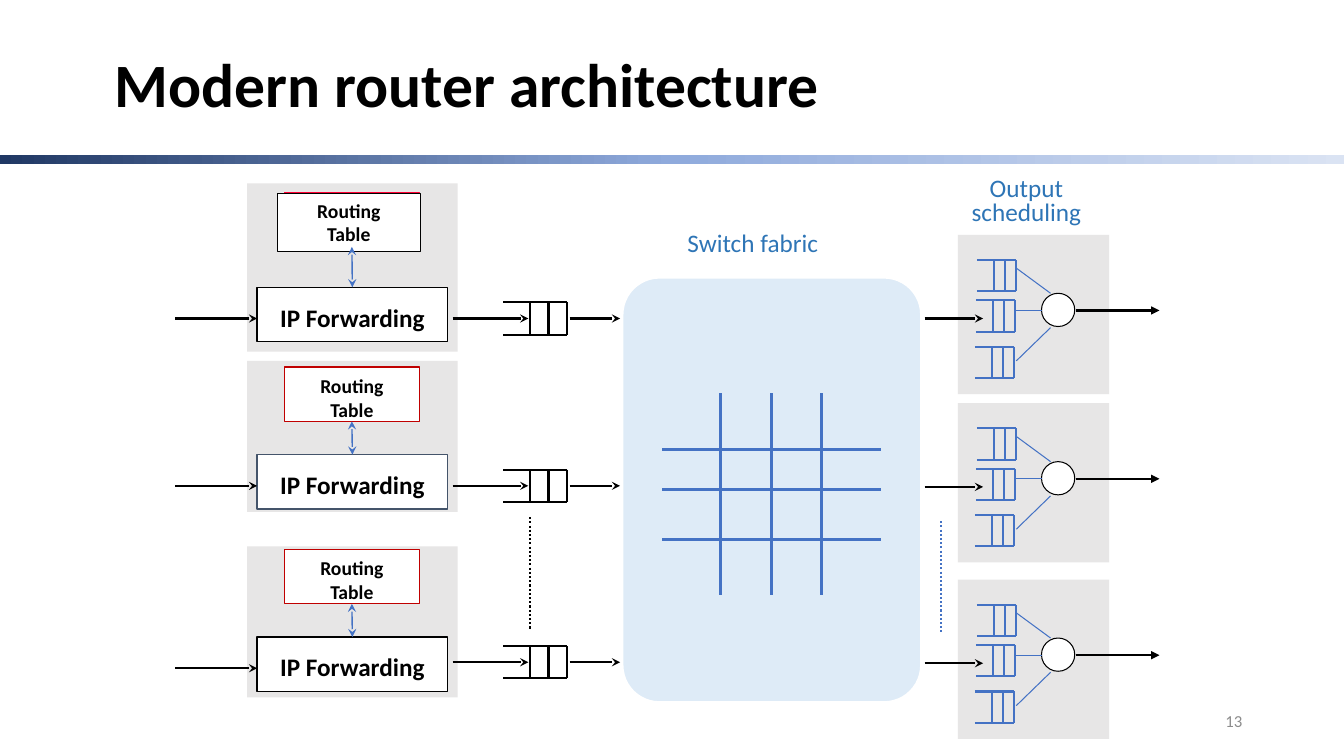
from pptx import Presentation
from pptx.dml.color import RGBColor
from pptx.enum import dml, shapes, text
from pptx.oxml import parse_xml
from pptx.oxml.ns import nsdecls
from pptx.util import Inches, Pt
from copy import deepcopy

FONT = "Calibri"
BLACK = RGBColor(0x00, 0x00, 0x00)
WHITE = RGBColor(0xFF, 0xFF, 0xFF)
GREY = RGBColor(0xE7, 0xE6, 0xE6)
SLATE = RGBColor(0x44, 0x54, 0x6A)
BLUE = RGBColor(0x44, 0x72, 0xC4)
LABEL_BLUE = RGBColor(0x2E, 0x75, 0xB6)
PALE_BLUE = RGBColor(0xDE, 0xEB, 0xF7)
DARK_RED = RGBColor(0xC0, 0x00, 0x00)
RED = RGBColor(0xFF, 0x00, 0x33)
NUMBER_GREY = RGBColor(0x8C, 0x8C, 0x8C)
BAND = [RGBColor(0x20, 0x38, 0x64), RGBColor(0x8F, 0xAA, 0xDC), RGBColor(0xDA, 0xE3, 0xF3)]

RECT = shapes.MSO_SHAPE.RECTANGLE
ROUND = shapes.MSO_SHAPE.ROUNDED_RECTANGLE
OVAL = shapes.MSO_SHAPE.OVAL
TOP, MIDDLE = text.MSO_ANCHOR.TOP, text.MSO_ANCHOR.MIDDLE
LEFT, CENTER, RIGHT = text.PP_ALIGN.LEFT, text.PP_ALIGN.CENTER, text.PP_ALIGN.RIGHT


def add_box(slide, kind, x, y, w, h, fill=None, line=None, width=1):
    sp = slide.shapes.add_shape(kind, Inches(x), Inches(y), Inches(w), Inches(h))
    sp.shadow.inherit = False
    if fill is None:
        sp.fill.background()
    else:
        sp.fill.solid()
        sp.fill.fore_color.rgb = fill
    if line is None:
        sp.line.fill.background()
    else:
        sp.line.color.rgb = line
        sp.line.width = Pt(width)
    return sp


def add_line(container, x1, y1, x2, y2, color, width=1.5, head=None, tail=None, dotted=False):
    cx = container.shapes.add_connector(
        shapes.MSO_CONNECTOR.STRAIGHT, Inches(x1), Inches(y1), Inches(x2), Inches(y2))
    cx.line.color.rgb = color
    cx.line.width = Pt(width)
    if dotted:
        cx.line.dash_style = dml.MSO_LINE.ROUND_DOT
    ln = cx.line._get_or_add_ln()
    for tag, arrow in (("headEnd", head), ("tailEnd", tail)):
        if arrow:
            ln.append(parse_xml(f'<a:{tag} {nsdecls("a")} type="{arrow}"/>'))
    cx._element.spPr.append(parse_xml(f'<a:effectLst {nsdecls("a")}/>'))
    return cx


def write(sp, lines, size, color=BLACK, bold=False, align=CENTER, anchor=TOP,
          wrap=True, spacing=None, inset=0.05):
    tf = sp.text_frame
    tf.word_wrap = wrap
    tf.vertical_anchor = anchor
    tf.margin_top = Inches(inset)
    for i, line in enumerate(lines):
        p = tf.add_paragraph() if i else tf.paragraphs[0]
        p.alignment = align
        if spacing:
            p.line_spacing = spacing
        r = p.add_run()
        r.text = line
        r.font.name = FONT
        r.font.size = Pt(size)
        r.font.bold = bold
        r.font.color.rgb = color


def add_label(slide, x, y, w, h, lines, size, color, **style):
    tb = slide.shapes.add_textbox(Inches(x), Inches(y), Inches(w), Inches(h))
    write(tb, lines, size, color, **style)


def add_queue(slide, x, y, w, h, step, color):
    """Open-ended buffer with three bars at its right end."""
    grp = slide.shapes.add_group_shape()
    for rail in (y, y + h):
        add_line(grp, x, rail, x + w, rail, color)
    for i in range(3):
        bar = x + w - i * step
        add_line(grp, bar, y, bar, y + h, color)


def add_header(slide):
    band = add_box(slide, RECT, 0, 1.54, 13.33, 0.09)
    band.fill.gradient()
    band.fill.gradient_angle = 0
    stops = band.fill._fill._gradFill.gsLst
    stops.insert(1, deepcopy(stops[0]))
    for i, (stop, color) in enumerate(zip(band.fill.gradient_stops, BAND)):
        stop.position = i / 2
        stop.color.rgb = color
    add_label(slide, 1.04, 0.24, 8.5, 1.25, ["Modern router architecture"], 44, BLACK,
              bold=True, align=LEFT, anchor=MIDDLE, spacing=0.9)


def add_line_card(slide, x, y, h, table_y, forward_y, forward_line, front=False):
    """Input card: routing table above IP forwarding, then its input queue."""
    add_box(slide, RECT, x, y, 2.09, h, GREY)
    forward = add_box(slide, RECT, x + 0.1, forward_y, 1.89, 0.54, WHITE, forward_line)
    write(forward, ["IP Forwarding"], 18, bold=True, anchor=MIDDLE, wrap=False, inset=0.1)
    table = add_box(slide, RECT, x + 0.37, table_y, 1.34, 0.54, WHITE,
                    RED if front else DARK_RED)
    name_box, inset = table, 0.07
    if front:
        name_box = add_box(slide, RECT, x + 0.3, table_y + 0.01, 1.42, 0.58, WHITE, BLACK, 0.75)
        inset = 0.05
    write(name_box, ["Routing", "Table"], 14, bold=True, inset=inset)
    lookup = add_line(slide, x + 1.04, table_y + 0.54, x + 1.04, forward_y, BLUE, 1,
                      head="stealth", tail="stealth")
    lookup.begin_connect(table, 2)
    lookup.end_connect(forward, 0)

    mid = forward_y + 0.31
    queue_mid = min(mid, 6.57)
    add_line(slide, x - 0.71, mid, x + 0.1, mid, BLACK, tail="stealth")
    add_queue(slide, x + 2.54, queue_mid - 0.16, 0.63, 0.32, 0.18, BLACK)
    for start, end in ((2.04, 2.79), (3.2, 3.7)):
        add_line(slide, x + start, queue_mid, x + end, queue_mid, BLACK, tail="stealth")


def add_switch_fabric(slide, x, y, w, h):
    fabric = add_box(slide, ROUND, x, y, w, h, PALE_BLUE, WHITE, 2)
    fabric.adjustments[0] = 0.125
    grid = slide.shapes.add_group_shape()
    for i in range(3):
        column = x + 0.98 + i * 0.5
        add_line(grid, column, y + 1.15, column, y + 3.15, BLUE, 2)
    for row in (1.71, 2.11, 2.6):
        add_line(grid, x + 0.4, y + row, x + 2.57, y + row, BLUE, 2)
    add_label(slide, x + 0.55, y - 0.54, 1.51, 0.4, ["Switch fabric"], 18, LABEL_BLUE,
              align=LEFT, wrap=False)


def add_output_scheduler(slide, x, y):
    """Three output queues feeding one scheduler."""
    add_box(slide, RECT, x, y, 1.5, 1.58, GREY)
    for dx, dy in ((0.19, 0.25), (0.18, 0.65), (0.17, 1.11)):
        add_queue(slide, x + dx, y + dy, 0.39, 0.31, 0.11, BLUE)
    add_line(slide, x - 0.33, y + 0.83, x + 0.25, y + 0.83, BLACK, tail="stealth")
    add_box(slide, OVAL, x + 0.83, y + 0.58, 0.33, 0.33, WHITE, BLACK, 0.75)
    for start, end_x, end_y in ((0.33, 0.92, 0.58), (0.75, 0.83, 0.75), (1.25, 0.92, 0.92)):
        add_line(slide, x + 0.58, y + start, x + end_x, y + end_y, BLUE, 0.75)
    add_line(slide, x + 1.17, y + 0.75, x + 2, y + 0.75, BLACK, tail="triangle")


def main():
    prs = Presentation()
    prs.slide_width, prs.slide_height = Inches(13.33), Inches(7.5)
    slide = prs.slides.add_slide(prs.slide_layouts[6])

    add_header(slide)
    add_line_card(slide, 2.45, 1.82, 1.67, 1.91, 2.85, BLACK, front=True)
    add_line_card(slide, 2.45, 3.58, 1.5, 3.64, 4.51, SLATE)
    add_line_card(slide, 2.45, 5.42, 1.5, 5.45, 6.32, BLACK)
    add_line(slide, 5.26, 5.13, 5.26, 6.24, BLACK, dotted=True)
    add_switch_fabric(slide, 6.17, 2.75, 2.97, 4.22)
    for y in (2.33, 4, 5.75):
        add_output_scheduler(slide, 9.5, y)
    add_line(slide, 9.33, 5.17, 9.33, 6.27, BLUE, dotted=True)
    add_label(slide, 9.53, 1.72, 1.3, 0.59, ["Output", "scheduling"], 18, LABEL_BLUE,
              wrap=False, spacing=0.8)
    add_label(slide, 9.42, 6.95, 3, 0.4, ["13"], 12, NUMBER_GREY, align=RIGHT, anchor=MIDDLE)
    prs.save("out.pptx")


if __name__ == "__main__":
    main()
